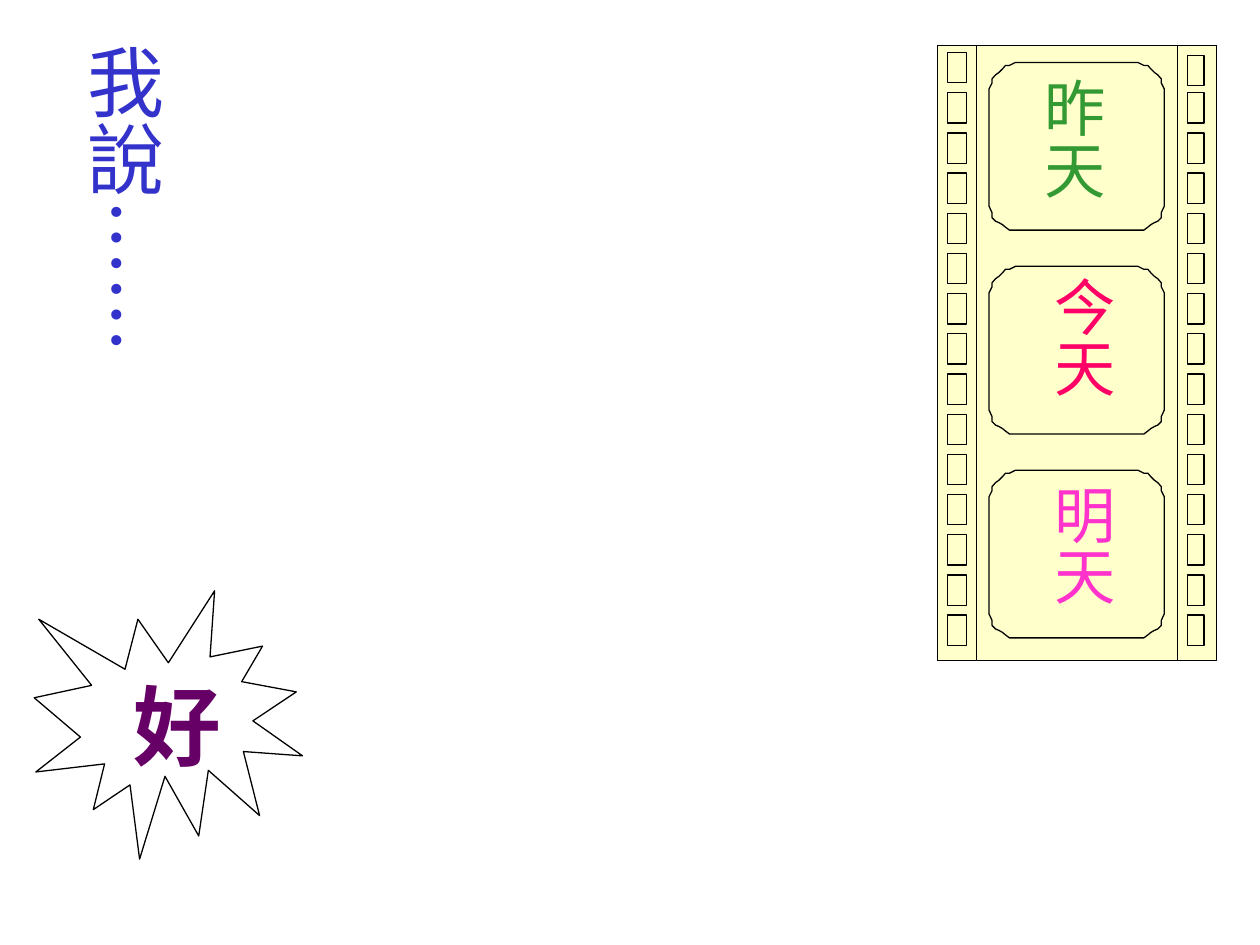
from copy import deepcopy
from lxml.etree import SubElement
from pptx import Presentation
from pptx.dml.color import RGBColor
from pptx.enum.shapes import MSO_SHAPE
from pptx.enum.text import MSO_ANCHOR, MSO_AUTO_SIZE, PP_ALIGN
from pptx.oxml.ns import qn
from pptx.util import Cm, Pt

FONT = "Noto Sans CJK SC"
UNIT = Cm(0.01)
TOP_CORNER = [(0, 53), (6, 41), (6, 33), (13, 25), (20, 20),
              (27, 13), (33, 6), (41, 6), (53, 0)]
BOTTOM_CORNER = [(53, 0), (41, 0), (33, 6), (27, 11), (20, 15),
                 (13, 18), (6, 25), (6, 35), (0, 48)]


def color(value):
    return RGBColor.from_string(value)


def place(sp, x, y, w, h):
    sp.left, sp.top, sp.width, sp.height = Cm(x), Cm(y), Cm(w), Cm(h)


def outline(sp):
    sp.shadow.inherit = False
    sp.line.color.rgb = color("000000")
    sp.line.width = Pt(0.75)


def write_vertical(sp, text, size, fill, bold=False):
    tf = sp.text_frame
    tf.word_wrap = True
    tf._txBody.bodyPr.set("vert", "eaVert")
    p = tf.paragraphs[0]
    p.alignment = PP_ALIGN.CENTER
    r = p.add_run()
    r.text = text
    r.font.size = Pt(size)
    r.font.bold = bold
    r.font.color.rgb = color(fill)
    r.font.name = FONT
    SubElement(r._r.get_or_add_rPr(), qn("a:ea")).set("typeface", FONT)
    return tf


def add_label(s, box, text, size, fill, bold=False):
    sp = s.shapes.add_textbox(*(Cm(v) for v in box))
    tf = write_vertical(sp, text, size, fill, bold)
    tf.auto_size = MSO_AUTO_SIZE.SHAPE_TO_FIT_TEXT


def add_title(s, x, y, w, h):
    sp = s.shapes.title
    place(sp, x, y, w, h)
    tf = write_vertical(sp, "我說……", 44, "3333CC")
    tf.vertical_anchor = MSO_ANCHOR.MIDDLE
    tf.auto_size = MSO_AUTO_SIZE.NONE


def rectangle(x, y, w, h):
    return [(x, y), (x + w, y), (x + w, y + h), (x, y + h)]


def frame(x, y, w, h):
    top_left = [(x + dx, y + dy) for dx, dy in TOP_CORNER]
    top_right = [(x + w - dx, y + dy) for dx, dy in reversed(TOP_CORNER)]
    bottom_right = [(x + w - dx, y + h - dy) for dx, dy in reversed(BOTTOM_CORNER)]
    bottom_left = [(x + dx, y + h - dy) for dx, dy in BOTTOM_CORNER]
    return top_left + top_right + bottom_right + bottom_left


def split_contours(sp):
    path = sp._element.find(".//" + qn("a:path"))
    path_list = path.getparent()
    segments = list(path)
    for segment in segments:
        path.remove(segment)
    for segment in segments:
        if segment.tag == qn("a:moveTo"):
            part = deepcopy(path)
            path_list.append(part)
        part.append(segment)
    path_list.remove(path)


def add_film(s, x, y, w, h):
    left, top, width, height = (round(v * 100) for v in (x, y, w, h))
    band = 79
    contours = [rectangle(left, top, width, height),
                rectangle(left, top, band, height),
                rectangle(left + width - band, top, band, height)]
    contours += [frame(left + 104, top + 34 + 411 * i, 353, 338) for i in range(3)]
    for hole_x, hole_w, first_drop in ((20, 39, 0), (504, 33, 6)):
        for i in range(15):
            drop = first_drop if i == 0 else 0
            contours.append(rectangle(left + hole_x, top + 14 + 81 * i + drop,
                                      hole_w, 61))
    builder = s.shapes.build_freeform(*contours[0][0], scale=UNIT)
    builder.add_line_segments(contours[0][1:], close=True)
    for points in contours[1:]:
        builder.move_to(*points[0])
        builder.add_line_segments(points[1:], close=True)
    sp = builder.convert_to_shape()
    sp.fill.solid()
    sp.fill.fore_color.rgb = color("FFFFCC")
    outline(sp)
    split_contours(sp)

    days = [("昨天", "339933", 1.6, 0.4, 3.2),
            ("今天", "FF0066", 1.8, 4.41, 3.4),
            ("明天", "FF33CC", 1.8, 8.6, 3.2)]
    for text, fill, dx, dy, label_h in days:
        add_label(s, (x + dx, y + dy, 2, label_h), text, 35, fill)


def add_burst(s, x, y, w, h):
    sp = s.shapes.add_shape(MSO_SHAPE.EXPLOSION1, Cm(x), Cm(y), Cm(w), Cm(h))
    sp.fill.background()
    outline(sp)
    add_label(s, (x + 1.37, y + 1.6, 2.64, 2.2), "好", 50, "660066", bold=True)


def main():
    prs = Presentation()
    prs.slide_width, prs.slide_height = Cm(25.4), Cm(19.05)
    s = prs.slides.add_slide(prs.slide_layouts[5])
    add_title(s, 0.69, 0.76, 3.6, 7.37)
    add_film(s, 18.9, 0.92, 5.63, 12.4)
    add_burst(s, 0.69, 11.91, 5.41, 5.41)
    prs.save("out.pptx")


if __name__ == "__main__":
    main()
